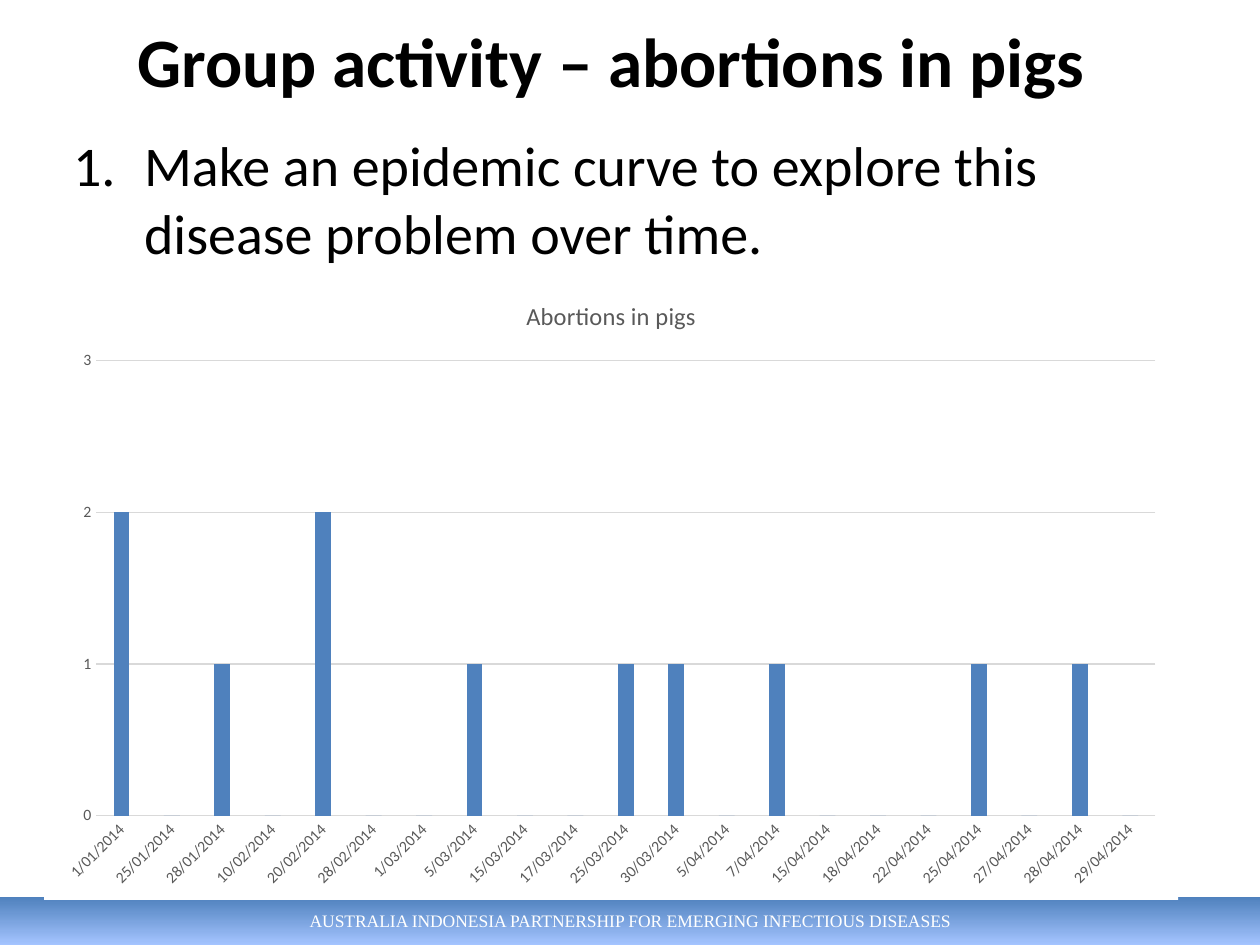
from lxml import etree
from pptx import Presentation
from pptx import util as u
from pptx.chart.data import CategoryChartData
from pptx.dml.color import RGBColor
from pptx.enum import chart as ch, shapes, text
from pptx.oxml import parse_xml
from pptx.oxml.ns import nsdecls, qn

# Content
TITLE = "Group activity – abortions in pigs"
TASKS = ["Make an epidemic curve to explore this disease problem over time."]
FOOTER = "AUSTRALIA INDONESIA PARTNERSHIP FOR EMERGING INFECTIOUS DISEASES"
CHART_TITLE = "Abortions in pigs"
ABORTIONS = [
    ("1/01/2014", 2), ("25/01/2014", 0), ("28/01/2014", 1),
    ("10/02/2014", 0), ("20/02/2014", 2), ("28/02/2014", 0),
    ("1/03/2014", 0), ("5/03/2014", 1), ("15/03/2014", 0),
    ("17/03/2014", 0), ("25/03/2014", 1), ("30/03/2014", 1),
    ("5/04/2014", 0), ("7/04/2014", 1), ("15/04/2014", 0),
    ("18/04/2014", 0), ("22/04/2014", 0), ("25/04/2014", 1),
    ("27/04/2014", 0), ("28/04/2014", 1), ("29/04/2014", 0),
]

# Style
BLACK = RGBColor(0x00, 0x00, 0x00)
WHITE = RGBColor(0xFF, 0xFF, 0xFF)
GREY = RGBColor(0x59, 0x59, 0x59)
RULE = RGBColor(0xD9, 0xD9, 0xD9)
BLUE = RGBColor(0x4F, 0x81, 0xBD)
PALE_BLUE = RGBColor(0xA4, 0xC4, 0xFF)
SANS, SERIF = "Calibri", "Times New Roman"

# Layout in cm: left, top, width, height
SLIDE_W, SLIDE_H = 25.4, 19.05
FOOTER_H = 0.97
CONTENT_W = 22.86
TITLE_BOX = (0.89, 0.33, CONTENT_W, 1.75)
BODY_BOX = (1.22, 2.51, CONTENT_W, 12.57)
CHART_BOX = (0.89, 5.54, CONTENT_W, 12.6)
FOOTER_BOX = (0, SLIDE_H - FOOTER_H, SLIDE_W, FOOTER_H)
INDENT = u.Cm(1.43)


def place(sp, box):
    sp.left, sp.top, sp.width, sp.height = map(u.Cm, box)


def set_font(font, size, color, name=SANS, bold=False):
    font.name, font.size, font.bold = name, u.Pt(size), bold
    font.color.rgb = color


def add_run(p, words, *style, **options):
    r = p.add_run()
    r.text = words
    set_font(r.font, *style, **options)


def set_line(line, color=RULE):
    line.color.rgb = color
    line.width = u.Pt(0.75)


prs = Presentation()
prs.slide_width, prs.slide_height = u.Cm(SLIDE_W), u.Cm(SLIDE_H)
s = prs.slides.add_slide(prs.slide_layouts[1])

# Footer band
sp = s.shapes.add_shape(shapes.MSO_SHAPE.RECTANGLE, *map(u.Cm, FOOTER_BOX))
sp.shadow.inherit = False
sp.line.fill.background()
sp.fill.gradient()
sp.fill.gradient_angle = 270
for stop, color in zip(sp.fill.gradient_stops, (BLUE, PALE_BLUE)):
    stop.color.rgb = color
tf = sp.text_frame
tf.vertical_anchor = text.MSO_ANCHOR.MIDDLE
p = tf.paragraphs[0]
p.alignment = text.PP_ALIGN.CENTER
add_run(p, FOOTER, 10, WHITE, name=SERIF)

# Title
sp = s.shapes.title
place(sp, TITLE_BOX)
tf = sp.text_frame
tf.auto_size = text.MSO_AUTO_SIZE.NONE
tf.vertical_anchor = text.MSO_ANCHOR.MIDDLE
p = tf.paragraphs[0]
p.alignment = text.PP_ALIGN.CENTER
add_run(p, TITLE, 39.6, BLACK, bold=True)

# Numbered task list
sp = s.placeholders[1]
place(sp, BODY_BOX)
tf = sp.text_frame
tf.auto_size = text.MSO_AUTO_SIZE.NONE
for i, task in enumerate(TASKS):
    p = tf.add_paragraph() if i else tf.paragraphs[0]
    if i == 0:
        p.space_before = u.Pt(0)
    pPr = p._p.get_or_add_pPr()
    pPr.set("marL", str(INDENT))
    pPr.set("indent", str(-INDENT))
    etree.SubElement(pPr, qn("a:buFont"), typeface="+mj-lt")
    etree.SubElement(pPr, qn("a:buAutoNum"), type="arabicPeriod")
    add_run(p, task, 32, BLACK)

# Epidemic curve
dates, counts = zip(*ABORTIONS)
data = CategoryChartData()
data.categories = dates
data.add_series("Series 1", counts)
chart = s.shapes.add_chart(
    ch.XL_CHART_TYPE.COLUMN_CLUSTERED, *map(u.Cm, CHART_BOX), data).chart
set_font(chart.font, 10, BLACK)
chart.has_legend = False
chart.has_title = True
add_run(chart.chart_title.text_frame.paragraphs[0], CHART_TITLE, 14, GREY)
chart.chart_title.include_in_layout = False

plot = chart.plots[0]
plot.vary_by_categories = False
plot.gap_width, plot.overlap = 219, -27
fill = plot.series[0].format.fill
fill.solid()
fill.fore_color.rgb = BLUE

# Axes
dates_axis, counts_axis = chart.category_axis, chart.value_axis
for axis in (dates_axis, counts_axis):
    axis.major_tick_mark = axis.minor_tick_mark = ch.XL_TICK_MARK.NONE
    set_font(axis.tick_labels.font, 9, GREY)
set_line(dates_axis.format.line)
dates_axis._element.find(qn("c:txPr")).find(qn("a:bodyPr")).set("rot", "-2700000")
counts_axis.minimum_scale, counts_axis.maximum_scale = 0, 3
counts_axis.major_unit = 1
counts_axis.tick_labels.number_format = "0"
counts_axis.tick_labels.number_format_is_linked = False
counts_axis.format.line.fill.background()
counts_axis.has_major_gridlines = True
set_line(counts_axis.major_gridlines.format.line)

# White chart background
chart._chartSpace.find(qn("c:chart")).addnext(parse_xml(
    f'<c:spPr {nsdecls("c", "a")}><a:solidFill><a:srgbClr val="{WHITE}"/>'
    "</a:solidFill><a:ln><a:noFill/></a:ln></c:spPr>"))

prs.save("out.pptx")
